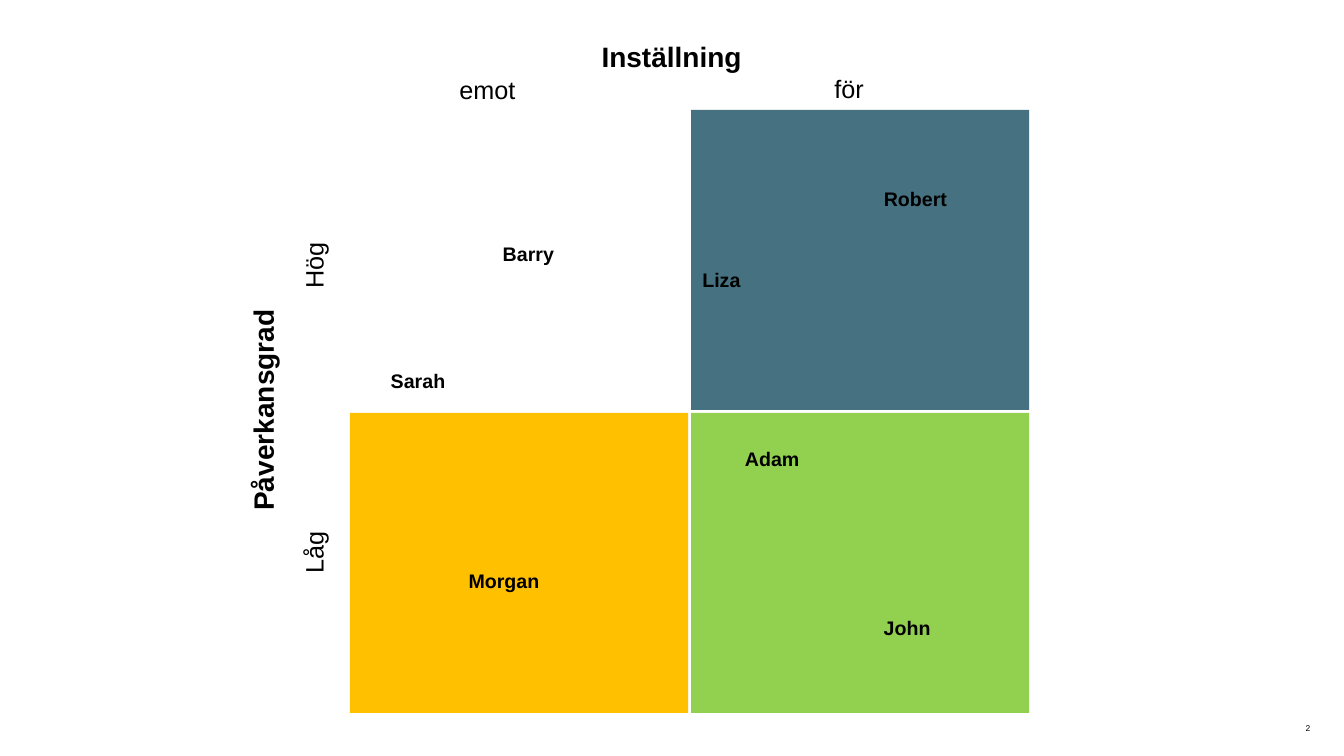
import pptx
import pptx.util
import pptx.dml.color
import pptx.enum.shapes
import pptx.enum.text

Pt = pptx.util.Pt
Align = pptx.enum.text.PP_ALIGN
Anchor = pptx.enum.text.MSO_ANCHOR

COLORS = {
    "text": "000000",
    "against_high": "FFFFFF",
    "for_high": "457180",
    "against_low": "FFC000",
    "for_low": "92D050",
}


def write(frame, text, size=14, bold=False, color="text", align=Align.LEFT):
    paragraph = frame.paragraphs[0]
    paragraph.alignment = align
    run = paragraph.add_run()
    run.text = text
    run.font.name = "Arial"
    run.font.size = Pt(size)
    run.font.bold = bold
    run.font.color.rgb = pptx.dml.color.RGBColor.from_string(COLORS[color])


class StakeholderSlide:
    def __init__(self, deck):
        self.slide = deck.slides.add_slide(deck.slide_layouts[6])

    def label(self, text, left, top, width, height, wrap=True, rotation=0,
              anchor=Anchor.TOP, inset=None, **style):
        box = self.slide.shapes.add_textbox(Pt(left), Pt(top), Pt(width), Pt(height))
        box.rotation = rotation
        frame = box.text_frame
        frame.word_wrap = wrap
        frame.auto_size = pptx.enum.text.MSO_AUTO_SIZE.SHAPE_TO_FIT_TEXT
        frame.vertical_anchor = anchor
        if inset is not None:
            frame.margin_left = frame.margin_right = Pt(inset)
            frame.margin_top = frame.margin_bottom = Pt(inset)
        write(frame, text, **style)

    def quadrant(self, color, left, top, width, height):
        area = self.slide.shapes.add_shape(
            pptx.enum.shapes.MSO_SHAPE.RECTANGLE,
            Pt(left), Pt(top), Pt(width), Pt(height))
        area.shadow.inherit = False
        area.fill.solid()
        area.fill.fore_color.rgb = pptx.dml.color.RGBColor.from_string(COLORS[color])
        area.line.fill.background()


def main():
    deck = pptx.Presentation()
    deck.slide_width, deck.slide_height = Pt(960), Pt(540)
    matrix = StakeholderSlide(deck)

    # Quadrants
    left, top, width, height, gap = 250, 78.5, 241.5, 214.3, 2.2
    rows = [("against_high", "for_high"), ("against_low", "for_low")]
    for row, colors in enumerate(rows):
        for column, color in enumerate(colors):
            matrix.quadrant(color, left + column * (width + gap),
                            top + row * (height + gap), width, height)

    # Axis titles
    for title, x, y, w, rotation in [("Inställning", 422.6, 24.5, 115, 0),
                                     ("Påverkansgrad", 108, 276, 160, 270)]:
        matrix.label(title, x, y, w, 31.7, wrap=False, rotation=rotation,
                     size=20, bold=True)

    # Axis levels
    for level, x, y, w, rotation in [("emot", 321, 49.7, 55, 0),
                                     ("för", 589, 49, 36, 0),
                                     ("Hög", 200.2, 175, 47.5, 270),
                                     ("Låg", 201.6, 380.2, 44.6, 270)]:
        matrix.label(level, x, y, w, 28.8, wrap=False, rotation=rotation,
                     anchor=Anchor.BOTTOM, size=18)

    # Stakeholders
    for person, x, y, w in [("Sarah", 272, 260, 71), ("Adam", 525, 316, 71),
                            ("John", 624.2, 436.3, 64), ("Robert", 624.2, 130.3, 79),
                            ("Liza", 494.6, 188, 56), ("Barry", 352, 169.2, 68),
                            ("Morgan", 327.6, 402.5, 86)]:
        matrix.label(person, x, y, w, 24.5, bold=True)

    # Page number
    matrix.label("2", 887.8, 516.2, 48.2, 7.2, inset=0, size=6, align=Align.RIGHT)

    deck.save("out.pptx")


if __name__ == "__main__":
    main()
